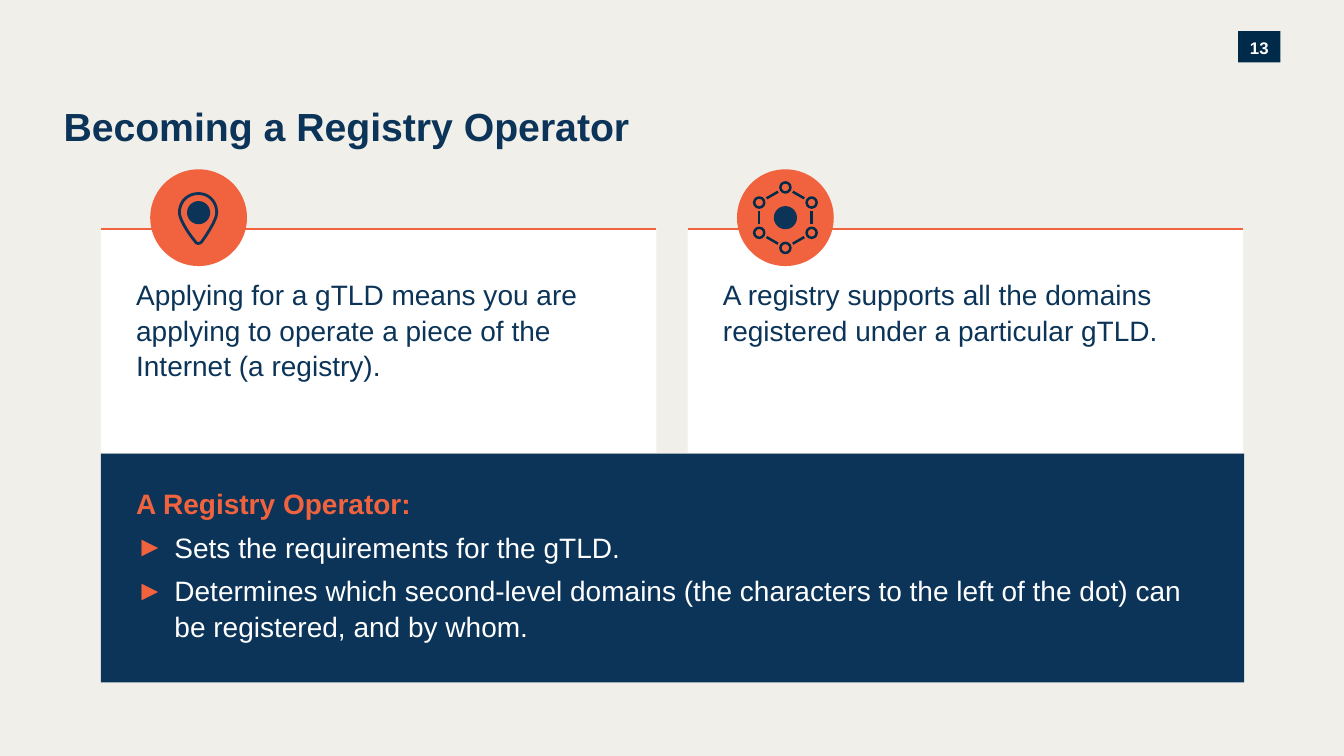
from dataclasses import dataclass
from math import cos, radians, sin

from lxml import etree
from pptx import Presentation
from pptx.dml.color import RGBColor
from pptx.enum.shapes import MSO_CONNECTOR, MSO_SHAPE
from pptx.enum.text import MSO_ANCHOR, MSO_AUTO_SIZE, PP_ALIGN
from pptx.oxml.ns import qn
from pptx.util import Emu, Pt

RECTANGLE, OVAL = MSO_SHAPE.RECTANGLE, MSO_SHAPE.OVAL
STRAIGHT = MSO_CONNECTOR.STRAIGHT
TOP, MIDDLE = MSO_ANCHOR.TOP, MSO_ANCHOR.MIDDLE
LEFT, CENTER = PP_ALIGN.LEFT, PP_ALIGN.CENTER
NO_AUTOFIT = MSO_AUTO_SIZE.NONE

EMU_PER_PX = 9144
COLORS = {
    "paper": "F1EFEA",
    "white": "FFFFFF",
    "navy": "0B3458",
    "ink": "002B49",
    "badge": "002A49",
    "orange": "F1633E",
}
CARD_TOP, CARD_WIDTH, CARD_HEIGHT = 227, 551, 222
ICON_Y, ICON_DIAMETER, DOT_DIAMETER = 216, 96, 23
RING_RADIUS, NODE_DIAMETER = 30, 10
LINK_START, LINK_END = 0.28, 0.72
PIN_START = (200, 240)
PIN_CURVES = [
    ((198, 242), (195, 242), (194, 240)),
    ((188, 233), (178, 218), (178, 211)),
    ((178, 200), (186, 192), (197, 192)),
    ((207, 192), (215, 200), (215, 211)),
    ((215, 218), (205, 233), (200, 240)),
]
CURVE_STEPS = 12


@dataclass(frozen=True)
class Card:
    left: int
    text: str


@dataclass(frozen=True)
class TextStyle:
    size: int
    color: str
    bold: bool = False
    align: PP_ALIGN = LEFT
    space_before: int = 0


CARDS = [
    Card(100, "Applying for a gTLD means you are applying to operate a piece of the Internet (a registry)."),
    Card(682, "A registry supports all the domains registered under a particular gTLD."),
]
DUTIES = [
    "Sets the requirements for the gTLD.",
    "Determines which second-level domains (the characters to the left of the dot) can be registered, and by whom.",
]


def px(length: float) -> Emu:
    return Emu(round(length * EMU_PER_PX))


def rgb(name: str) -> RGBColor:
    return RGBColor.from_string(COLORS[name])


def place(shape, left: float, top: float, width: float, height: float) -> None:
    shape.left, shape.top = px(left), px(top)
    shape.width, shape.height = px(width), px(height)


def paint(shape, fill: str | None, line: str | None = None, points: float = 0) -> None:
    shape.shadow.inherit = False
    if fill:
        shape.fill.solid()
        shape.fill.fore_color.rgb = rgb(fill)
    else:
        shape.fill.background()
    if line:
        shape.line.color.rgb = rgb(line)
        shape.line.width = Pt(points)
    else:
        shape.line.fill.background()


def add_box(parent, kind: MSO_SHAPE, left: float, top: float, width: float, height: float, fill: str):
    box = parent.add_shape(kind, px(left), px(top), px(width), px(height))
    paint(box, fill)
    return box


def add_disc(parent, x: float, y: float, diameter: int, fill: str | None,
             line: str | None = None, points: float = 0) -> None:
    disc = parent.add_shape(OVAL, px(x - diameter / 2), px(y - diameter / 2), px(diameter), px(diameter))
    paint(disc, fill, line, points)


def add_line(parent, start: tuple, end: tuple, color: str, points: float) -> None:
    line = parent.add_connector(STRAIGHT, px(start[0]), px(start[1]), px(end[0]), px(end[1]))
    line.line.color.rgb = rgb(color)
    line.line.width = Pt(points)
    etree.SubElement(line._element.spPr, qn("a:effectLst"))


def set_frame(shape, insets: tuple, anchor: MSO_ANCHOR):
    frame = shape.text_frame
    frame.word_wrap = True
    frame.auto_size = NO_AUTOFIT
    frame.vertical_anchor = anchor
    frame.margin_left, frame.margin_top, frame.margin_right, frame.margin_bottom = map(px, insets)
    return frame


def write(paragraph, text: str, style: TextStyle) -> None:
    paragraph.text = text
    paragraph.alignment = style.align
    paragraph.line_spacing = 1.05
    paragraph.space_before = Pt(style.space_before)
    font = paragraph.font
    font.name, font.size, font.bold = "Arial", Pt(style.size), style.bold
    font.color.rgb = rgb(style.color)


def set_bullet(paragraph, indent: int, mark: str | None) -> None:
    properties = paragraph._p.get_or_add_pPr()
    properties.set("marL", str(px(indent)))
    properties.set("indent", str(px(-indent)))
    if mark:
        color = etree.SubElement(properties, qn("a:buClr"))
        etree.SubElement(color, qn("a:srgbClr"), val=COLORS["orange"])
        etree.SubElement(properties, qn("a:buFont"), typeface="Arial")
        etree.SubElement(properties, qn("a:buChar"), char=mark)
    else:
        etree.SubElement(properties, qn("a:buNone"))


def add_card(page, card: Card) -> None:
    box = add_box(page.shapes, RECTANGLE, card.left, CARD_TOP, CARD_WIDTH, CARD_HEIGHT, "white")
    frame = set_frame(box, (35, 47, 39, 30), TOP)
    write(frame.paragraphs[0], card.text, TextStyle(20, "navy"))
    add_line(page.shapes, (card.left, CARD_TOP), (card.left + CARD_WIDTH, CARD_TOP), "orange", 1.25)


def fill_panel(panel) -> None:
    place(panel, 100, 450, 1134, 227)
    paint(panel, "navy")
    frame = set_frame(panel, (35, 31, 47, 30), TOP)
    heading = frame.paragraphs[0]
    set_bullet(heading, 0, None)
    write(heading, "A Registry Operator:", TextStyle(20, "orange", bold=True))
    for duty in DUTIES:
        paragraph = frame.add_paragraph()
        set_bullet(paragraph, 38, "►")
        write(paragraph, duty, TextStyle(20, "white", space_before=6))


def add_network_icon(page, x: int) -> None:
    icon = page.shapes.add_group_shape().shapes
    add_disc(icon, x, ICON_Y, ICON_DIAMETER, "orange")
    angles = [radians(60 * step - 90) for step in range(6)]
    nodes = [(x + RING_RADIUS * cos(angle), ICON_Y + RING_RADIUS * sin(angle)) for angle in angles]
    for node, following in zip(nodes, nodes[1:] + nodes[:1]):
        start, end = (
            tuple(a + (b - a) * share for a, b in zip(node, following))
            for share in (LINK_START, LINK_END)
        )
        add_line(icon, start, end, "ink", 1.75)
        add_disc(icon, *node, NODE_DIAMETER, None, "ink", 1.75)
    add_disc(icon, x, ICON_Y, DOT_DIAMETER, "navy")


def curve_points(start: tuple, first: tuple, second: tuple, end: tuple) -> list[tuple]:
    steps = [step / CURVE_STEPS for step in range(1, CURVE_STEPS + 1)]
    return [
        tuple(px((1 - t) ** 3 * a + 3 * (1 - t) ** 2 * t * b + 3 * (1 - t) * t ** 2 * c + t ** 3 * d)
              for a, b, c, d in zip(start, first, second, end))
        for t in steps
    ]


def add_pin_icon(page, x: int) -> None:
    icon = page.shapes.add_group_shape().shapes
    add_disc(icon, x, ICON_Y, ICON_DIAMETER, "orange")
    add_disc(icon, x, 211, DOT_DIAMETER, "navy")
    builder = icon.build_freeform(px(PIN_START[0]), px(PIN_START[1]))
    start = PIN_START
    for curve in PIN_CURVES:
        builder.add_line_segments(curve_points(start, *curve), close=curve is PIN_CURVES[-1])
        start = curve[-1]
    paint(builder.convert_to_shape(), None, "navy", 2)


def main() -> None:
    deck = Presentation()
    deck.slide_width, deck.slide_height = px(1333), px(750)
    page = deck.slides.add_slide(deck.slide_layouts[1])
    page.background.fill.solid()
    page.background.fill.fore_color.rgb = rgb("paper")

    title = page.shapes.title
    place(title, 63, 98, 751, 52)
    frame = set_frame(title, (0, 0, 0, 0), MIDDLE)
    write(frame.paragraphs[0], "Becoming a Registry Operator", TextStyle(28, "navy", bold=True))

    fill_panel(page.placeholders[1])
    badge = add_box(page.shapes, RECTANGLE, 1228, 31, 42, 31, "badge")
    frame = set_frame(badge, (0, 0, 0, 0), MIDDLE)
    write(frame.paragraphs[0], "13", TextStyle(12, "white", bold=True, align=CENTER))

    for card in CARDS:
        add_card(page, card)
    add_network_icon(page, 779)
    add_pin_icon(page, 197)
    deck.save("out.pptx")


if __name__ == "__main__":
    main()
